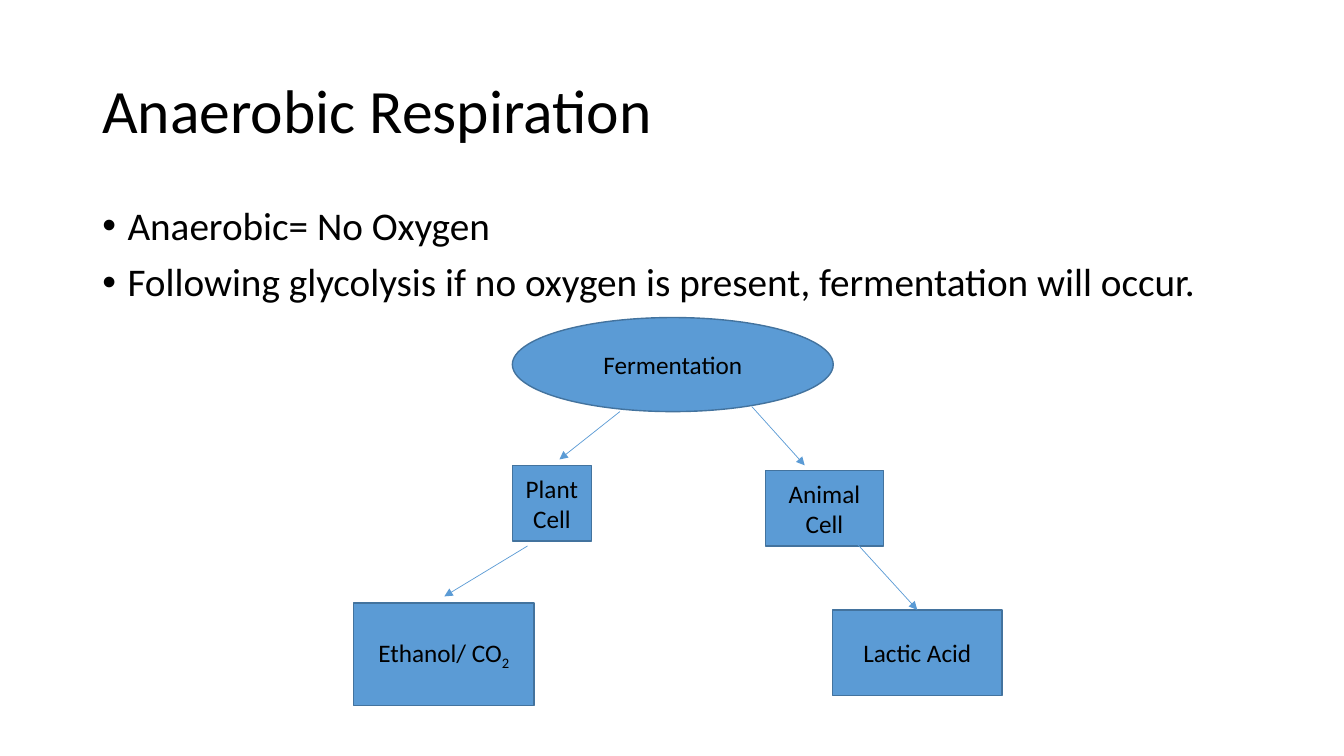
from lxml.etree import SubElement
from pptx import Presentation
from pptx.dml.color import RGBColor
from pptx.enum.shapes import MSO_CONNECTOR, MSO_SHAPE
from pptx.enum.text import MSO_ANCHOR, PP_ALIGN
from pptx.oxml.ns import qn
from pptx.util import Inches, Pt

COLUMNS, ROWS = 160, 90


def color(value):
    return RGBColor.from_string(value)


class Page:
    """Draws styled elements on one slide, measured in grid columns and rows."""

    font, ink, fill, outline = "Calibri", "000000", "5B9BD5", "43739E"

    def __init__(self, deck):
        self.column = deck.slide_width / COLUMNS
        self.row = deck.slide_height / ROWS
        self.shapes = deck.slides.add_slide(deck.slide_layouts[6]).shapes

    def place(self, *numbers):
        units = (self.column, self.row) * 2
        return [round(number * unit) for number, unit in zip(numbers, units)]

    def style(self, para, size):
        para.font.name = self.font
        para.font.size = Pt(size)
        para.font.color.rgb = color(self.ink)

    def text(self, lines, area, size, anchor=MSO_ANCHOR.TOP, bullet=None):
        frame = self.shapes.add_textbox(*self.place(*area)).text_frame
        frame.word_wrap = True
        frame.vertical_anchor = anchor
        for index, line in enumerate(lines):
            para = frame.add_paragraph() if index else frame.paragraphs[0]
            para.add_run().text = line
            para.line_spacing = 0.9
            if index:
                para.space_before = Pt(10)
            if bullet:
                properties = para._p.get_or_add_pPr()
                properties.set("marL", str(Inches(0.25)))
                properties.set("indent", str(-Inches(0.25)))
                SubElement(properties, qn("a:buFont")).set("typeface", "Arial")
                SubElement(properties, qn("a:buChar")).set("char", bullet)
            self.style(para, size)

    def node(self, label, area, kind=MSO_SHAPE.RECTANGLE, subscript=None):
        box = self.shapes.add_shape(kind, *self.place(*area))
        box.shadow.inherit = False
        box.fill.solid()
        box.fill.fore_color.rgb = color(self.fill)
        box.line.color.rgb = color(self.outline)
        box.line.width = Pt(1)
        box.text_frame.word_wrap = True
        box.text_frame.vertical_anchor = MSO_ANCHOR.MIDDLE
        para = box.text_frame.paragraphs[0]
        para.alignment = PP_ALIGN.CENTER
        para.add_run().text = label
        if subscript:
            span = para.add_run()
            span.text = subscript
            span._r.get_or_add_rPr().set("baseline", "-25000")
        self.style(para, 18)
        return box

    def arrow(self, start, end, target=None):
        link = self.shapes.add_connector(MSO_CONNECTOR.STRAIGHT, *self.place(*start, *end))
        if target:
            link.end_connect(target, 0)
        link.line.color.rgb = color(self.fill)
        link.line.width = Pt(0.5)
        SubElement(link.line._get_or_add_ln(), qn("a:tailEnd")).set("type", "triangle")
        SubElement(link._element.spPr, qn("a:effectLst"))


def main():
    deck = Presentation()
    deck.slide_width, deck.slide_height = Inches(13.33), Inches(7.5)
    page = Page(deck)

    page.text(["Anaerobic Respiration"], (11, 4.8, 138, 17.4), 44, MSO_ANCHOR.MIDDLE)
    page.text(
        [
            "Anaerobic= No Oxygen",
            "Following glycolysis if no oxygen is present, fermentation will occur.",
        ],
        (11, 24, 138, 57.1), 28, bullet="•",
    )

    page.node("Fermentation", (61, 37.8, 38.2, 11.2), MSO_SHAPE.OVAL)
    page.node("Plant Cell", (61, 55.4, 9.4, 9))
    page.node("Animal Cell", (91.1, 56, 14.1, 9))
    page.node("Ethanol/ CO", (42.1, 71.8, 21.5, 12.2), subscript="2")
    lactic_acid = page.node("Lactic Acid", (99.1, 72.6, 20.2, 10.2))

    page.arrow((73.8, 49), (66.6, 54.7))
    page.arrow((89.5, 48.4), (95.8, 55.4))
    page.arrow((62.8, 65), (52.9, 71))
    page.arrow((102, 64.7), (109.2, 72.6), lactic_acid)

    deck.save("out.pptx")


if __name__ == "__main__":
    main()
